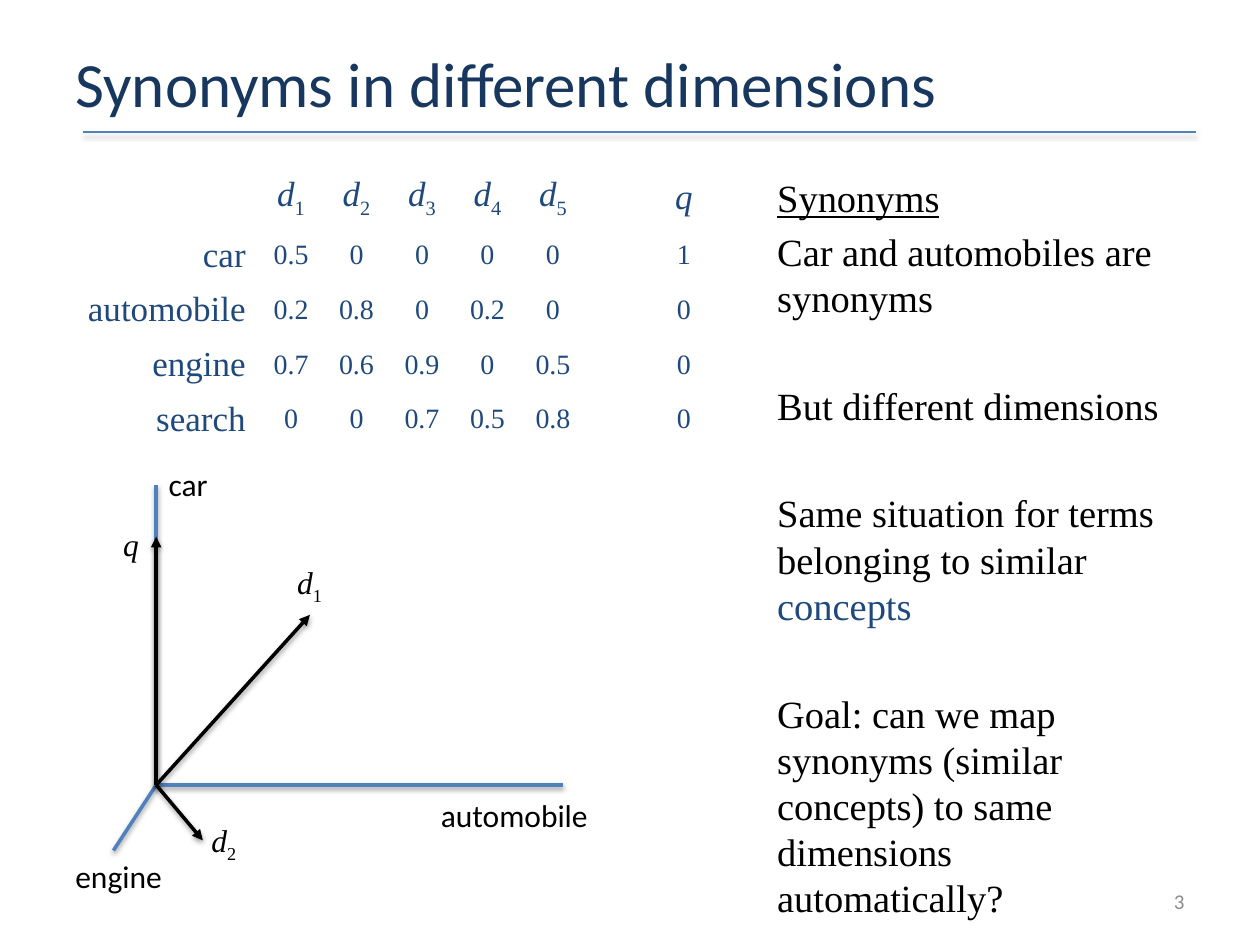
from lxml import etree
from pptx import Presentation
from pptx.dml.color import RGBColor
from pptx.enum.shapes import MSO_CONNECTOR
from pptx.enum.text import MSO_ANCHOR, MSO_AUTO_SIZE, PP_ALIGN
from pptx.oxml.ns import qn
from pptx.util import Pt

STRAIGHT = MSO_CONNECTOR.STRAIGHT
MIDDLE = MSO_ANCHOR.MIDDLE
TOP = MSO_ANCHOR.TOP
GROW = MSO_AUTO_SIZE.SHAPE_TO_FIT_TEXT
LEFT, CENTER, RIGHT = PP_ALIGN.LEFT, PP_ALIGN.CENTER, PP_ALIGN.RIGHT

SANS, SERIF = "Calibri", "Times New Roman"
BLACK, NAVY, BLUE, ACCENT = "000000", "17375E", "1F497D", "4F81BD"

ORIGIN = (89.28, 448.56)
AXIS_ENDS = [(64.8, 486), (89.28, 277.2), (321.84, 448.56)]
VECTOR_ENDS = [(89.28, 306.72), (177.12, 351.36), (115.92, 480.24)]
AXIS_LABELS = [
    ("automobile", 244.8, 451.44, 100.08),
    ("car", 89.28, 262.08, 66.96),
    ("engine", 36, 486, 66.96),
]
VECTOR_LABELS = [
    ("d", "2", 113.76, 465.84, 31.68),
    ("q", "", 63.36, 296.64, 25.92),
    ("d", "1", 162.72, 318.24, 31.68),
]
TERM_WEIGHTS = [
    ("car", "0.5", "0", "0", "0", "0", "", "1"),
    ("automobile", "0.2", "0.8", "0", "0.2", "0", "", "0"),
    ("engine", "0.7", "0.6", "0.9", "0", "0.5", "", "0"),
    ("search", "0", "0", "0.7", "0.5", "0.8", "", "0"),
]
LINE_HEIGHT = 26.4
NEAR_GAP = 4.4
FAR_GAP = LINE_HEIGHT + 2 * NEAR_GAP
BODY = [
    (NEAR_GAP, [("Synonyms", {"underline": True})]),
    (NEAR_GAP, [("Car and automobiles are synonyms", {})]),
    (FAR_GAP, [("But different dimensions", {})]),
    (FAR_GAP, [("Same situation for terms belonging to similar ", {}),
               ("concepts", {"color": BLUE})]),
    (FAR_GAP, [("Goal: can we map synonyms (similar concepts) to same "
                "dimensions automatically?", {})]),
]


def color_of(value):
    return RGBColor.from_string(value)


def set_attributes(target, values):
    for name, value in values.items():
        setattr(target, name, value)


def add_span(para, text, size, name, color, subscript=False, **extra):
    span = para.add_run()
    span.text = text
    set_attributes(span.font, {"size": Pt(size), "name": name, **extra})
    span.font.color.rgb = color_of(color)
    if subscript:
        span.font._element.set("baseline", "-25000")


def add_symbol(para, letter, index, size, color):
    add_span(para, letter, size, SERIF, color, italic=True)
    if index:
        add_span(para, index, size, SERIF, color, subscript=True)


def add_box(page, left, top, width, height, **frame_values):
    box = page.shapes.add_textbox(Pt(left), Pt(top), Pt(width), Pt(height))
    set_attributes(box.text_frame, {"word_wrap": True, **frame_values})
    return box.text_frame


def add_label(page, left, top, width):
    return add_box(page, left, top, width, 28.8, auto_size=GROW).paragraphs[0]


def add_line(page, start, end, color, weight, arrow=False):
    line = page.shapes.add_connector(STRAIGHT, *map(Pt, start + end))
    line.line.width = Pt(weight)
    line.line.color.rgb = color_of(color)
    if arrow:
        etree.SubElement(line.line._get_or_add_ln(), qn("a:tailEnd"), type="triangle")
    properties = line._element.spPr
    effects = etree.SubElement(properties, qn("a:effectLst"))
    shadow = etree.SubElement(
        effects, qn("a:outerShdw"), blurRad=str(Pt(3.1)), dist=str(Pt(1.6)),
        dir="5400000", rotWithShape="0")
    shade = etree.SubElement(shadow, qn("a:srgbClr"), val=BLACK)
    etree.SubElement(shade, qn("a:alpha"), val="38000")


def add_body(page):
    frame = add_box(page, 437.04, 95.76, 246.96, 404.64, vertical_anchor=TOP)
    for index, (gap, spans) in enumerate(BODY):
        para = frame.add_paragraph() if index else frame.paragraphs[0]
        set_attributes(para, {"space_before": Pt(gap), "line_spacing": Pt(LINE_HEIGHT)})
        for text, values in spans:
            add_span(para, text, **{"size": 22, "name": SERIF, "color": BLACK, **values})


def add_weights(page):
    row_count, column_count = len(TERM_WEIGHTS) + 1, len(TERM_WEIGHTS[0])
    table = page.shapes.add_table(
        row_count, column_count, Pt(33.84), Pt(95.76), Pt(375.84), Pt(159.6)).table
    set_attributes(table, {"first_row": False, "horz_banding": False})
    for index, column in enumerate(table.columns):
        column.width = Pt(37.44 if index else 113.76)
    for index, row in enumerate(table.rows):
        row.height = Pt(31.25 if index else 34.6)
    for cell in table.iter_cells():
        cell.fill.background()
        cell.vertical_anchor = MIDDLE
        cell.text_frame.paragraphs[0].alignment = CENTER

    headings = [("d", str(number)) for number in range(1, 6)] + [("", ""), ("q", "")]
    for column, (letter, index) in enumerate(headings, 1):
        if letter:
            para = table.cell(0, column).text_frame.paragraphs[0]
            add_symbol(para, letter, index, 20, BLUE)
    for row, values in enumerate(TERM_WEIGHTS, 1):
        for column, text in enumerate(values):
            if text:
                para = table.cell(row, column).text_frame.paragraphs[0]
                para.alignment = CENTER if column else RIGHT
                add_span(para, text, 16 if column else 20, SERIF, BLUE)


def add_vector_space(page):
    for end in AXIS_ENDS:
        add_line(page, ORIGIN, end, ACCENT, 2)
    for end in VECTOR_ENDS:
        add_line(page, ORIGIN, end, BLACK, 2, arrow=True)
    for text, *place in AXIS_LABELS:
        add_span(add_label(page, *place), text, 18, SANS, BLACK)
    for letter, index, *place in VECTOR_LABELS:
        add_symbol(add_label(page, *place), letter, index, 18, BLACK)


def main():
    deck = Presentation()
    set_attributes(deck, {"slide_width": Pt(720), "slide_height": Pt(540)})
    page = deck.slides.add_slide(deck.slide_layouts[6])

    add_line(page, (47.52, 75.6), (683.28, 75.6), ACCENT, 1)
    title = add_box(page, 36, 21.6, 648, 51.12, vertical_anchor=MIDDLE)
    title.paragraphs[0].alignment = LEFT
    add_span(title.paragraphs[0], "Synonyms in different dimensions", 36, SANS, NAVY)
    add_body(page)
    add_vector_space(page)
    add_weights(page)

    number = add_box(page, 516.24, 500.4, 167.76, 28.8, vertical_anchor=MIDDLE)
    number.paragraphs[0].alignment = RIGHT
    add_span(number.paragraphs[0], "3", 12, SANS, "8C8C8C")
    deck.save("out.pptx")


if __name__ == "__main__":
    main()
